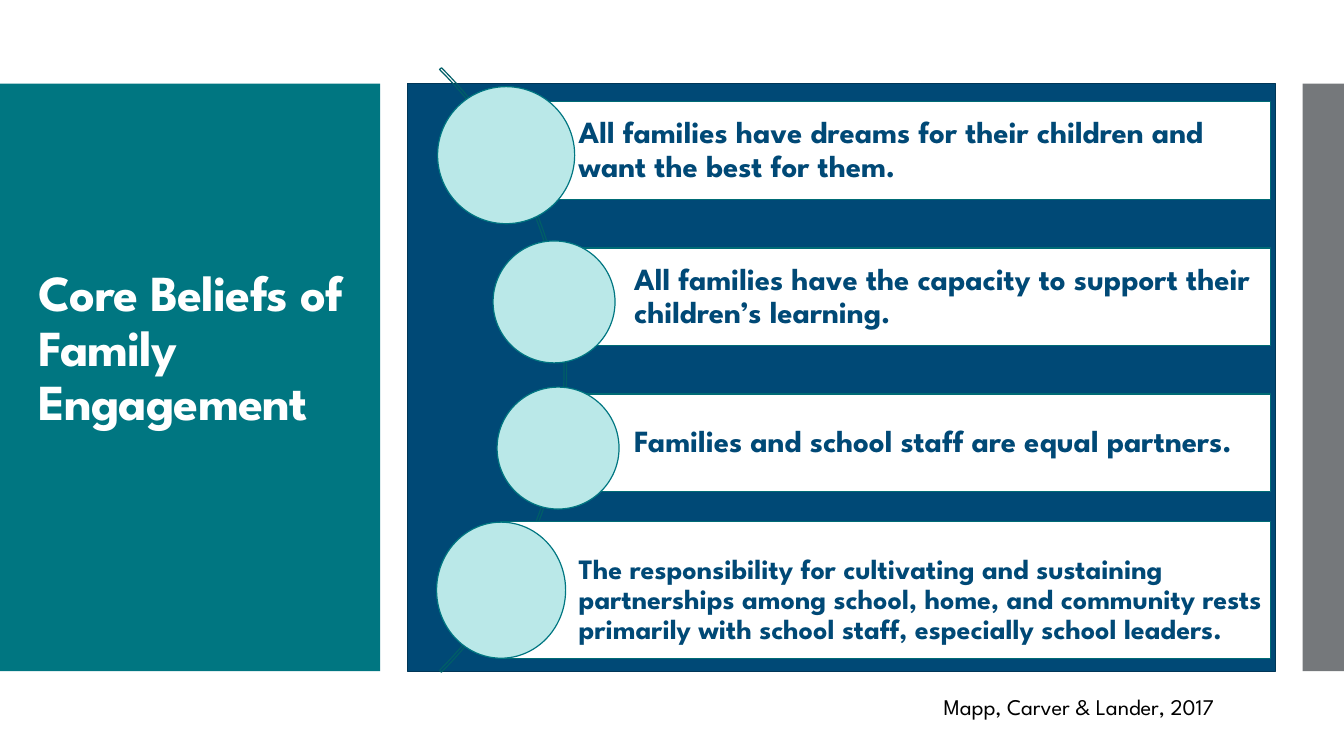
"""Build the slide on the core beliefs of family engagement."""
from pptx import Presentation, util as u
from pptx.dml.color import RGBColor
from pptx.enum import shapes, text

NAVY, TEAL, GREY, WHITE, MINT = "004976", "007681", "75787B", "FFFFFF", "BAE8E8"
EDGE = "006B75"
KIND = shapes.MSO_SHAPE


def color(code):
    return RGBColor.from_string(code)


class Board:
    font = "League Spartan"
    stroke = 0.85

    def __init__(self, slide):
        self.slide = slide

    def shape(self, kind, box, fill=None, line=None):
        item = self.slide.shapes.add_shape(kind, *map(u.Inches, box))
        item.shadow.inherit = False
        if fill:
            item.fill.solid()
            item.fill.fore_color.rgb = color(fill)
        else:
            item.fill.background()
        if line:
            item.line.color.rgb = color(line)
            item.line.width = u.Pt(self.stroke)
        else:
            item.line.fill.background()
        return item

    def label(self, item, words, size, tone, pads, bold=True, space=0.9,
              anchor=text.MSO_ANCHOR.MIDDLE):
        frame = item.text_frame
        frame.word_wrap = True
        frame.auto_size = text.MSO_AUTO_SIZE.NONE
        frame.vertical_anchor = anchor
        (frame.margin_left, frame.margin_top,
         frame.margin_right, frame.margin_bottom) = map(u.Inches, pads)
        frame.text = words
        para = frame.paragraphs[0]
        para.alignment = text.PP_ALIGN.LEFT
        para.line_spacing = space
        para.font.name = self.font
        para.font.size = u.Pt(size)
        para.font.bold = bold
        para.font.color.rgb = color(tone)
        return para

    def title(self, words, box):
        item = self.slide.shapes.title
        item.left, item.top, item.width, item.height = map(u.Inches, box)
        para = self.label(item, words, 36, WHITE, (0.1, 0.05, 0.1, 0.6))
        para.font._element.set("spc", "-60")
        self.slide.shapes._spTree.append(item._element)

    def arc(self, box, sweep, line):
        item = self.shape(KIND.BLOCK_ARC, box, line=line)
        for i, value in enumerate(sweep):
            item.adjustments[i] = value

    def belief(self, words, left, top, high, size, pads, disc):
        right = 12.6
        bar = self.shape(KIND.RECTANGLE, (left, top, right - left, high), WHITE, EDGE)
        self.label(bar, words, size, NAVY, pads)
        self.shape(KIND.OVAL, disc, MINT, TEAL)

    def note(self, words, box):
        item = self.slide.shapes.add_textbox(*map(u.Inches, box))
        self.label(item, words, 16, "000000", (0.13, 0.05, 0.1, 0.05),
                   bold=False, space=1.0, anchor=text.MSO_ANCHOR.TOP)


def main():
    deck = Presentation()
    deck.slide_width, deck.slide_height = u.Inches(13.33), u.Inches(7.5)
    board = Board(deck.slides.add_slide(deck.slide_layouts[5]))

    top, high = 0.83, 5.83
    board.shape(KIND.RECTANGLE, (4.04, top, 8.61, high), NAVY, "003657")
    board.shape(KIND.RECTANGLE, (0, top, 3.77, high), TEAL)
    board.shape(KIND.RECTANGLE, (12.92, top, 0.41, high), GREY)
    board.title("Core Beliefs of Family Engagement", (0.28, 1.23, 3.36, 5.03))
    board.arc((-2.86, -0.57, 8.48, 8.48), (189, 27, 0.003), "005E67")

    pads = (0.77, 0.06, 0.06, 0.06)
    beliefs = [
        ("All families have dreams for their children and want the best for them.",
         4.97, 1.01, 0.97, 22, pads, (4.34, 0.86, 1.36, 1.36)),
        ("All families have the capacity to support their children’s learning.",
         5.52, 2.46, 0.97, 22, pads, (4.89, 2.39, 1.21, 1.21)),
        ("Families and school staff are equal partners.",
         5.52, 3.91, 0.97, 22, pads, (4.93, 3.84, 1.21, 1.21)),
        ("The responsibility for cultivating and sustaining partnerships among school, "
         "home, and community rests primarily with school staff, especially school leaders.",
         4.97, 5.17, 1.36, 20, (0.77, 0.24, 0.03, 0.03), (4.33, 5.18, 1.28, 1.35)),
    ]
    for belief in beliefs:
        board.belief(*belief)
    board.note("Mapp, Carver & Lander, 2017", (9.23, 6.83, 3.43, 0.37))
    deck.save("out.pptx")


if __name__ == "__main__":
    main()
